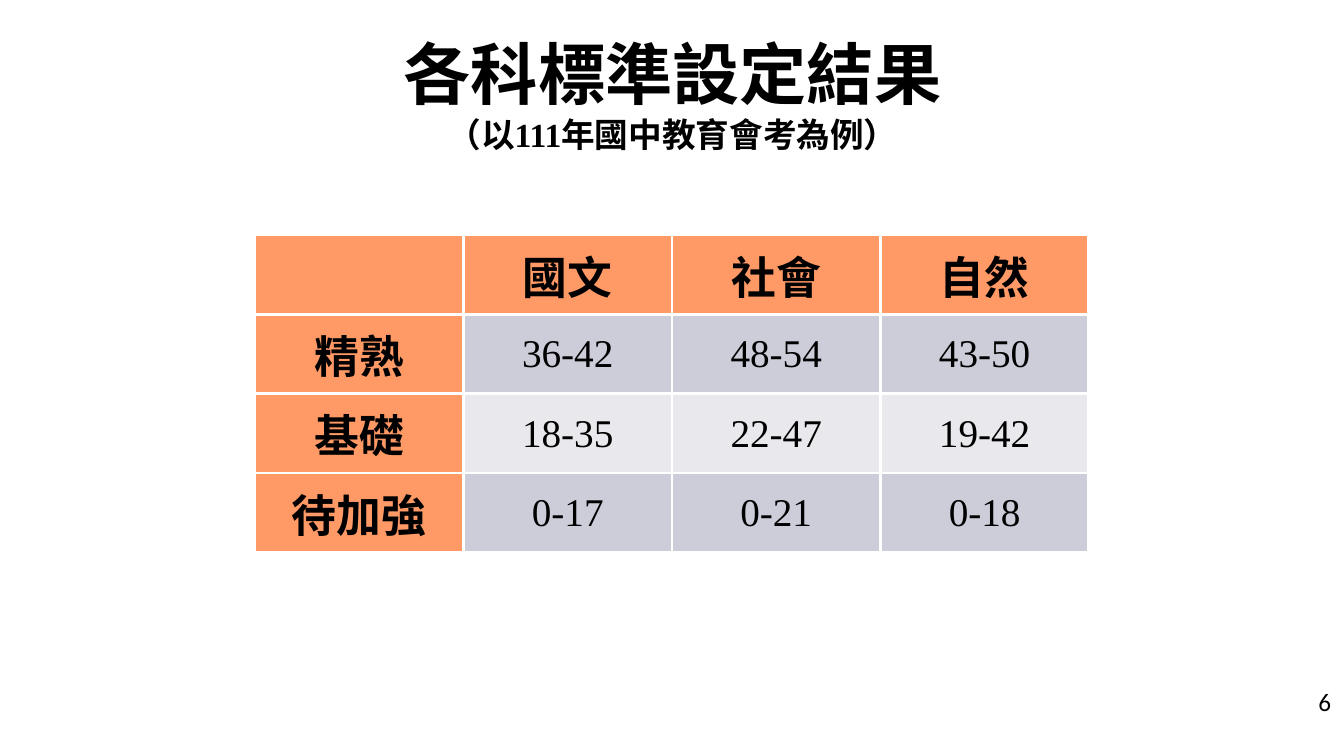
from dataclasses import dataclass

from lxml.etree import SubElement
from pptx import Presentation
from pptx.dml.color import RGBColor
from pptx.enum.text import MSO_ANCHOR, PP_ALIGN
from pptx.oxml import parse_xml
from pptx.oxml.ns import nsdecls, qn
from pptx.util import Inches, Pt


@dataclass(frozen=True)
class Theme:
    ink: str = "000000"
    edge: str = "FFFFFF"
    head: str = "FF9966"
    bands: tuple = ("CDCDDA", "E8E8ED")
    serif: str = "Times New Roman"
    sans: str = "Calibri"
    han: str = "Noto Sans CJK SC"
    title: int = 48
    sub: int = 24
    label: int = 32
    value: int = 28
    page: int = 18
    border: float = 2.25


class Deck:
    def __init__(self, theme):
        self.theme = theme
        self.prs = Presentation()
        self.prs.slide_width, self.prs.slide_height = Inches(13.33), Inches(7.5)
        self.slide = self.prs.slides.add_slide(self.prs.slide_layouts[6])

    def style(self, run, size, face, bold=False):
        font = run.font
        font.size, font.name, font.bold = Pt(size), face, bold
        font.color.rgb = RGBColor.from_string(self.theme.ink)
        SubElement(run._r.get_or_add_rPr(), qn("a:ea"), typeface=self.theme.han)

    def box(self, place, align):
        """Add a middle-anchored text box and return its first paragraph."""
        frame = self.slide.shapes.add_textbox(*map(Inches, place)).text_frame
        frame.word_wrap = True
        frame.vertical_anchor = MSO_ANCHOR.MIDDLE
        frame.paragraphs[0].alignment = align
        return frame.paragraphs[0]

    def title(self, text, parts, place):
        """Add a heading with a smaller second line of (text, face) parts."""
        para = self.box(place, PP_ALIGN.CENTER)
        para.text = text + "\v"
        self.style(para.runs[0], self.theme.title, self.theme.serif, True)
        for part, face in parts:
            run = para.add_run()
            run.text = part
            self.style(run, self.theme.sub, face, True)

    def page(self, number, place):
        para = self.box(place, PP_ALIGN.RIGHT)
        para.text = str(number)
        self.style(para.runs[0], self.theme.page, self.theme.sans)

    def border(self, cell):
        props = cell._tc.get_or_add_tcPr()
        for spot, side in enumerate(("lnL", "lnR", "lnT", "lnB")):
            props.insert(spot, parse_xml(
                f'<a:{side} {nsdecls("a")} w="{Pt(self.theme.border)}"><a:solidFill>'
                f'<a:srgbClr val="{self.theme.edge}"/></a:solidFill></a:{side}>'))

    def cell(self, cell, text, fill, size, bold, pads):
        cell.fill.solid()
        cell.fill.fore_color.rgb = RGBColor.from_string(fill)
        self.border(cell)
        cell.vertical_anchor = MSO_ANCHOR.MIDDLE
        cell.margin_left = cell.margin_right = Inches(pads[0])
        cell.margin_top, cell.margin_bottom = Inches(pads[1]), Inches(pads[2])
        cell.text = text
        para = cell.text_frame.paragraphs[0]
        para.alignment = PP_ALIGN.CENTER
        for run in para.runs:
            self.style(run, size, self.theme.serif, bold)

    def table(self, rows, place):
        """Add a grid whose first row and column are headings."""
        look = self.theme
        grid = self.slide.shapes.add_table(
            len(rows), len(rows[0]), *map(Inches, place)).table
        for r, row in enumerate(rows):
            for c, text in enumerate(row):
                if r and c:
                    band = look.bands[(r - 1) % 2]
                    kind = (band, look.value, False, (0.01, 0.01, 0))
                else:
                    pads = (0.02, 0, 0) if r else (0.1, 0.05, 0.05)
                    kind = (look.head, look.label, True, pads)
                self.cell(grid.cell(r, c), text, *kind)


def main():
    look = Theme()
    deck = Deck(look)
    deck.table([
        ("", "國文", "社會", "自然"),
        ("精熟", "36-42", "48-54", "43-50"),
        ("基礎", "18-35", "22-47", "19-42"),
        ("待加強", "0-17", "0-21", "0-18"),
    ], (2.53, 2.33, 8.27, 3.15))
    deck.title("各科標準設定結果", [
        ("（以", look.han),
        ("111", look.serif),
        ("年國中教育會考為例）", look.han),
    ], (0.67, 0.3, 12, 1.25))
    deck.page(6, (10.19, 6.76, 3.11, 0.4))
    deck.prs.save("out.pptx")


if __name__ == "__main__":
    main()
